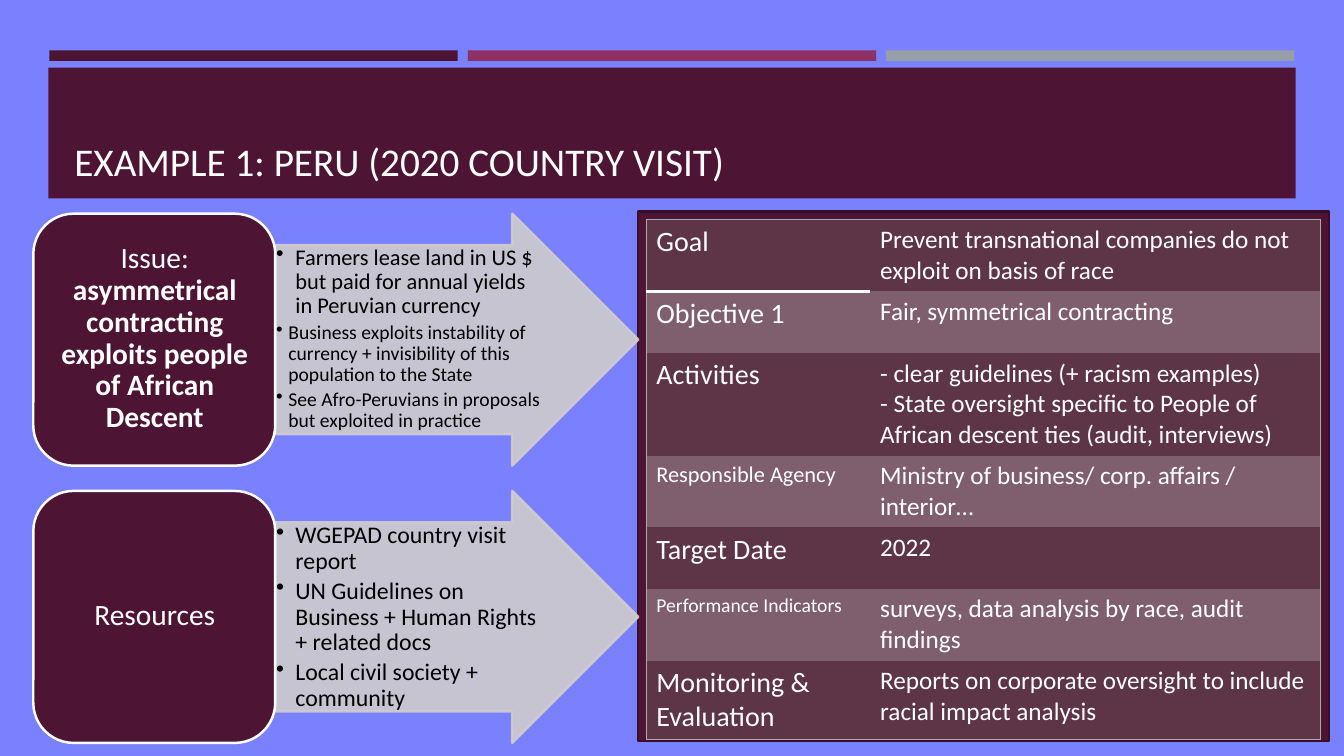
"""Build the slide on the Peru country visit: two issue arrows beside a plan table."""
from lxml.etree import SubElement
from pptx import Presentation
from pptx.dml.color import RGBColor
from pptx.enum.shapes import MSO_SHAPE
from pptx.enum.text import MSO_ANCHOR, PP_ALIGN
from pptx.oxml import parse_xml
from pptx.oxml.ns import nsdecls, qn
from pptx.util import Inches, Pt

HUES = {"back": "7A81FF", "wine": "4D1434", "plum": "903163", "grey": "969FA7",
        "edge": "390F26", "pale": "D0CCCE", "white": "FFFFFF", "black": "000000",
        "dark": "5E3547", "light": "7F5F6D", "rule": "B0A9AC"}
FONT = "Calibri"

deck = Presentation()
deck.slide_width, deck.slide_height = Inches(13.33), Inches(7.5)
slide = deck.slides.add_slide(deck.slide_layouts[6])
slide.background.fill.solid()
slide.background.fill.fore_color.rgb = RGBColor.from_string(HUES["back"])


def area(x, y, w, h):
    """Turn percentages of the slide into lengths."""
    wide, high = deck.slide_width / 100, deck.slide_height / 100
    return int(x * wide), int(y * high), int(w * wide), int(h * high)


def draw(kind, spot, hue, line=None):
    """Add a filled shape, with an outline if a colour is named."""
    shape = slide.shapes.add_shape(kind, *area(*spot))
    shape.shadow.inherit = False
    shape.fill.solid()
    shape.fill.fore_color.rgb = RGBColor.from_string(HUES[hue])
    if line:
        shape.line.color.rgb = RGBColor.from_string(HUES[line])
        shape.line.width = Pt(1.75)
    else:
        shape.line.fill.background()
    return shape


for i, hue in enumerate(["wine", "plum", "grey"]):
    draw(MSO_SHAPE.RECTANGLE, (3.68 + 31.13 * i, 6.67, 30.38, 1.4), hue)
draw(MSO_SHAPE.RECTANGLE, (3.6, 8.93, 92.8, 17.33), "wine")
draw(MSO_SHAPE.RECTANGLE, (47.49, 28, 51.39, 70), "wine", "edge")

title = slide.shapes.add_textbox(*area(4.8, 10.27, 90.47, 14.8)).text_frame
title.word_wrap = True
title.vertical_anchor = MSO_ANCHOR.BOTTOM
head = title.paragraphs[0]
head.text = "EXAMPLE 1: PERU (2020 COUNTRY VISIT)"
head.font.name, head.font.size = FONT, Pt(28)
head.font.color.rgb = RGBColor.from_string(HUES["white"])

flows = [
    ([("Issue: ", False),
      ("asymmetrical contracting exploits people of African Descent", True)],
     [("Farmers lease land in US $ but paid for annual yields in Peruvian currency", 16, 0.19),
      ("Business exploits instability of currency + invisibility of this population to the State",
       14, 0.12),
      ("See Afro-Peruvians in proposals but exploited in practice", 14, 0.12)]),
    ([("Resources", False)],
     [("WGEPAD country visit report", 17, 0.19),
      ("UN Guidelines on Business + Human Rights + related docs", 17, 0.19),
      ("Local civil society + community", 17, 0.19)]),
]
for i, (label, points) in enumerate(flows):
    top = 28.27 + 36.67 * i
    arrow = draw(MSO_SHAPE.RIGHT_ARROW, (20.48, top, 27.01, 33.33), "pale", "pale")
    arrow.adjustments[0], arrow.adjustments[1] = 0.75, 0.5
    for tint in arrow._element.spPr.iter(qn("a:srgbClr")):
        SubElement(tint, qn("a:alpha")).set("val", "90000")

    notes = slide.shapes.add_textbox(*area(20.48, top + 4.13, 19.95, 24.93)).text_frame
    notes.word_wrap = True
    notes.margin_left = notes.margin_right = Inches(0.01)
    notes.margin_top = notes.margin_bottom = Inches(0.01)
    for j, (text, size, dent) in enumerate(points):
        para = notes.add_paragraph() if j else notes.paragraphs[0]
        para.text = text
        para.font.name, para.font.size = FONT, Pt(size)
        para.font.color.rgb = RGBColor.from_string(HUES["black"])
        para.line_spacing, para.space_after = 0.9, Pt(0.18 * size)
        props = para._p.get_or_add_pPr()
        props.set("marL", str(Inches(dent)))
        props.set("indent", str(-Inches(dent)))
        mark = parse_xml(f'<a:buChar {nsdecls("a")} char="•"/>')
        props.insert_element_before(mark, "a:tabLst", "a:defRPr", "a:extLst")

    draw(MSO_SHAPE.ROUNDED_RECTANGLE, (2.48, top, 18, 33.33), "wine", "white")
    name = slide.shapes.add_textbox(*area(3.38, top + 1.47, 16.28, 30.13)).text_frame
    name.word_wrap = True
    name.vertical_anchor = MSO_ANCHOR.MIDDLE
    name.margin_left = name.margin_right = Inches(0.09)
    name.margin_top = name.margin_bottom = Inches(0.04)
    para = name.paragraphs[0]
    para.alignment, para.line_spacing = PP_ALIGN.CENTER, 0.9
    para.font.name, para.font.size = FONT, Pt(21)
    para.font.color.rgb = RGBColor.from_string(HUES["white"])
    for text, bold in label:
        run = para.add_run()
        run.text, run.font.bold = text, bold

plan = [
    ("Goal", 20, "Prevent transnational companies do not exploit on basis of race", 9.47),
    ("Objective 1", 20, "Fair, symmetrical contracting", 8.15),
    ("Activities", 20, "- clear guidelines (+ racism examples)\n- State oversight specific to "
     "People of African descent ties (audit, interviews)", 13.6),
    ("Responsible Agency", 16, "Ministry of business/ corp. affairs / interior…", 9.47),
    ("Target Date", 20, "2022", 8.15),
    ("Performance Indicators", 14, "surveys, data analysis by race, audit findings", 9.47),
    ("Monitoring & Evaluation", 20,
     "Reports on corporate oversight to include racial impact analysis", 10.4),
]
last = len(plan) - 1
table = slide.shapes.add_table(len(plan), 2, *area(48.09, 29.07, 50.19, 68.7)).table
table.first_row = table.horz_banding = False
table._tbl.tblPr.find(qn("a:tableStyleId")).text = "{2D5ABB26-0587-4C30-8999-92F81FD0307C}"
for col, share in zip(table.columns, (16.65, 33.54)):
    col.width = area(share, 0, 0, 0)[0]
for r, (term, size, text, share) in enumerate(plan):
    table.rows[r].height = area(0, share, 0, 0)[1]
    for c, (words, points) in enumerate([(term, size), (text, 18)]):
        cell = table.cell(r, c)
        cell.text = words
        cell.fill.solid()
        cell.fill.fore_color.rgb = RGBColor.from_string(HUES["light" if r % 2 else "dark"])
        for para in cell.text_frame.paragraphs:
            para.font.name, para.font.size = FONT, Pt(points)
            para.font.color.rgb = RGBColor.from_string(HUES["white"])
        sides = []
        sides.append(("lnR", "rule", 1) if c else ("lnL", "rule", 1))
        if r == 0:
            sides.append(("lnT", "rule", 1))
        if r == last:
            sides.append(("lnB", "rule", 1))
        if r == 0 and c == 0:
            sides.append(("lnB", "white", 2))
        for k, (side, hue, width) in enumerate(sides):
            cell._tc.get_or_add_tcPr().insert(k, parse_xml(
                f'<a:{side} {nsdecls("a")} w="{Pt(width)}"><a:solidFill>'
                f'<a:srgbClr val="{HUES[hue]}"/></a:solidFill></a:{side}>'))

deck.save("out.pptx")
